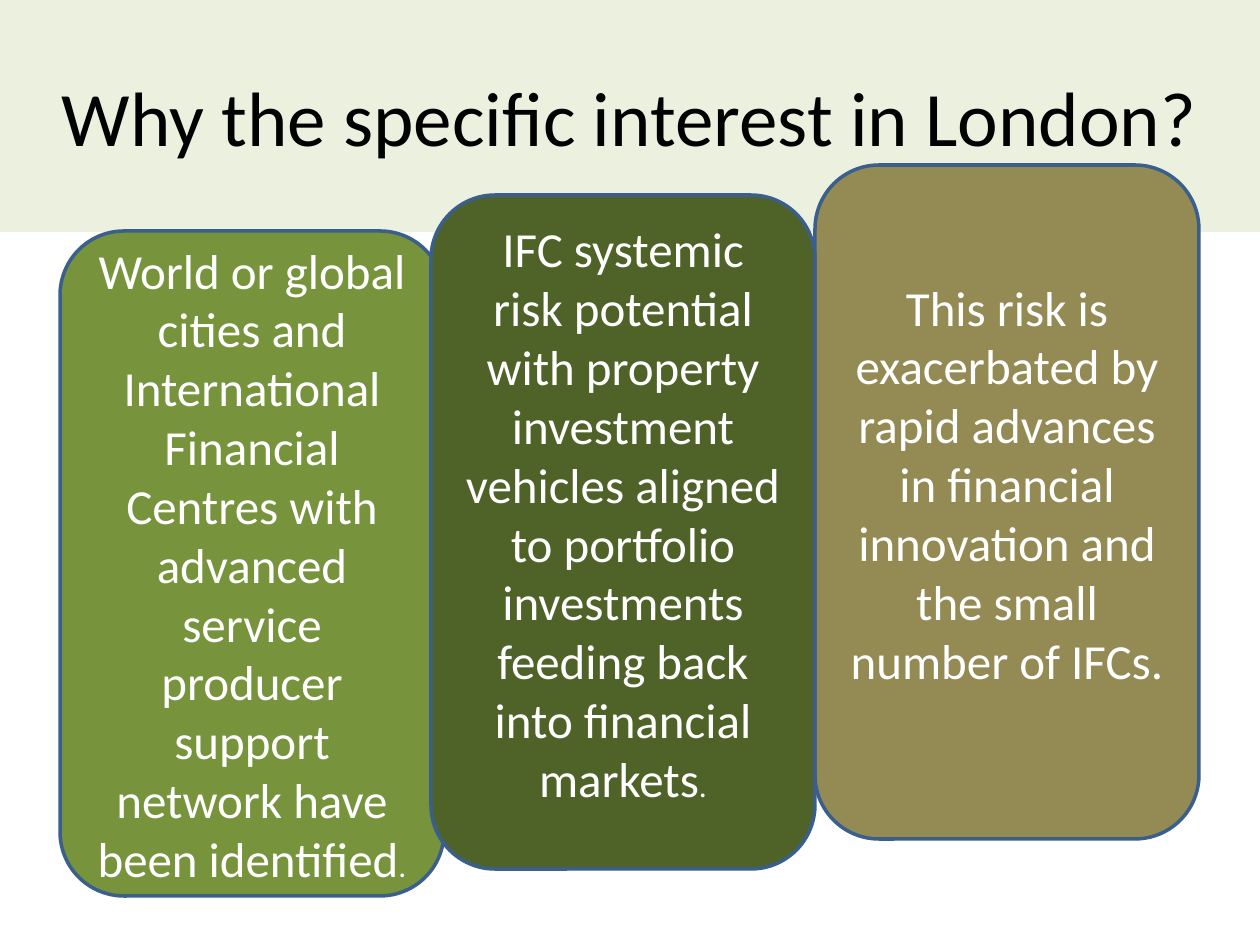
from pptx import Presentation, util as u
from pptx.dml.color import RGBColor
from pptx.enum import shapes, text

COLORS = {
    "band": "EBF1DE", "title": "000000", "text": "FFFFFF", "edge": "3A5F8C",
    "green": "77933C", "olive": "4F6228", "tan": "948A54",
}
TITLE = "Why the specific interest in London?"
CARD_W = 384
CARDS = [
    (60, 231, 665, "green", 6,
     [("World or global cities and International Financial Centres with advanced "
       "service producer support network have been identified", 28), (".", 18)]),
    (815, 165, 674, "tan", 44,
     [("This risk is exacerbated by rapid advances in financial innovation "
       "and the small number of IFCs.", 28)]),
    (431, 195, 674, "olive", 44,
     [("IFC systemic risk potential with property investment vehicles aligned to "
       "portfolio investments feeding back into financial markets", 28), (".", 18)]),
]


def px(n):
    return u.Emu(round(n * 914400 / 126))


def rgb(name):
    return RGBColor.from_string(COLORS[name])


def add_panel(s, kind, box, fill, runs, color, bottom=6):
    sp = s.shapes.add_shape(kind, *map(px, box))
    sp.shadow.inherit = False
    sp.fill.solid()
    sp.fill.fore_color.rgb = rgb(fill)
    tf = sp.text_frame
    tf.word_wrap = True
    tf.vertical_anchor = text.MSO_ANCHOR.MIDDLE
    tf.margin_bottom = px(bottom)
    p = tf.paragraphs[0]
    p.alignment = text.PP_ALIGN.CENTER
    p.font.name = "Calibri"
    p.font.color.rgb = rgb(color)
    p.font.size = u.Pt(runs[0][1])
    for words, size in runs:
        r = p.add_run()
        r.text = words
        if len(runs) > 1:
            r.font.size = u.Pt(size)
    return sp


prs = Presentation()
prs.slide_width, prs.slide_height = px(1260), px(945)
s = prs.slides.add_slide(prs.slide_layouts[6])

band = add_panel(s, shapes.MSO_SHAPE.RECTANGLE, (0, 0, 1260, 232), "band",
                 [(TITLE, 44)], "title")
band.line.fill.background()

for left, top, height, fill, bottom, runs in CARDS:
    card = add_panel(s, shapes.MSO_SHAPE.ROUNDED_RECTANGLE,
                     (left, top, CARD_W, height), fill, runs, "text", bottom)
    card.line.color.rgb = rgb("edge")
    card.line.width = u.Pt(2)

prs.save("out.pptx")
